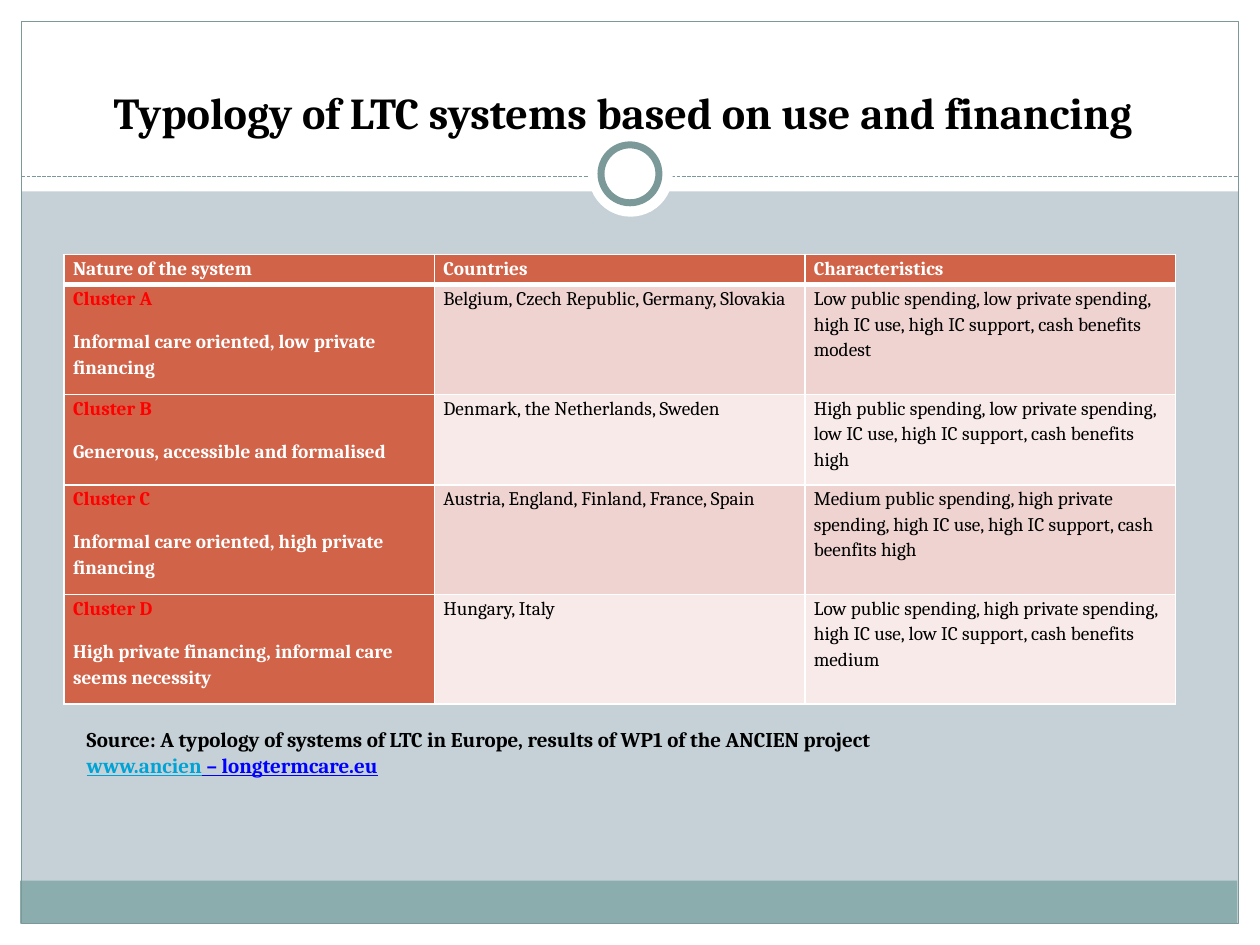
from lxml.etree import SubElement
from pptx import Presentation
from pptx.dml.color import RGBColor
from pptx.enum.dml import MSO_LINE
from pptx.enum.shapes import MSO_CONNECTOR, MSO_SHAPE
from pptx.enum.text import MSO_ANCHOR, MSO_AUTO_SIZE, PP_ALIGN
from pptx.oxml.ns import qn
from pptx.util import Inches, Pt

COLORS = {
    "background": "C5D1D7", "white": "FFFFFF", "black": "000000",
    "footer": "8CADAE", "frame": "7C999A", "accent": "D16349",
    "odd": "EED3D0", "even": "F7EAE9", "cluster": "FF0000",
    "site": "00A3D6", "address": "0000FF",
}
FONT = "Cambria"
TITLE = "Typology of LTC systems based on use and financing"
HEADINGS = ["Nature of the system", "Countries", "Characteristics"]
CLUSTERS = [
    ("Cluster A\nInformal care oriented, low private financing",
     "Belgium, Czech Republic, Germany, Slovakia",
     "Low public spending, low private spending, high IC use, "
     "high IC support, cash benefits modest"),
    ("Cluster B\nGenerous, accessible and formalised",
     "Denmark, the Netherlands, Sweden",
     "High public spending, low private spending, low IC use, "
     "high IC support, cash benefits high"),
    ("Cluster C\nInformal care oriented, high private financing",
     "Austria, England, Finland, France, Spain",
     "Medium public spending, high private spending, high IC use, "
     "high IC support, cash beenfits high"),
    ("Cluster D\nHigh private financing, informal care seems necessity",
     "Hungary, Italy",
     "Low public spending, high private spending, high IC use, "
     "low IC support, cash benefits medium"),
]
ROW_HEIGHTS = [0.24, 0.87, 0.72, 0.87, 0.87]
SOURCE = "Source: A typology of systems of LTC in Europe, results of WP1 of the ANCIEN project"


def rgb(name):
    """Return the palette colour called name."""
    return RGBColor.from_string(COLORS[name])


def format_run(run, size, color, bold=False, underline=None):
    """Apply the slide font and the given look to a run."""
    font = run.font
    font.name, font.size, font.bold = FONT, Pt(size), bold
    font.underline = underline
    font.color.rgb = rgb(color)


def add_panel(slide, kind, box, fill=None, line=None, weight=0.75):
    """Add a flat preset shape with an optional fill and outline."""
    panel = slide.shapes.add_shape(kind, *map(Inches, box))
    panel.shadow.inherit = False
    if fill:
        panel.fill.solid()
        panel.fill.fore_color.rgb = rgb(fill)
    else:
        panel.fill.background()
    if line:
        panel.line.color.rgb = rgb(line)
        panel.line.width = Pt(weight)
    else:
        panel.line.fill.background()


def add_divider(slide):
    """Add the dashed line below the title."""
    divider = slide.shapes.add_connector(
        MSO_CONNECTOR.STRAIGHT, Inches(0.17), Inches(1.4), Inches(9.83), Inches(1.4))
    divider.line.color.rgb = rgb("frame")
    divider.line.width = Pt(0.75)
    divider.line.dash_style = MSO_LINE.SQUARE_DOT
    SubElement(divider.element.spPr, qn("a:effectLst"))


def add_backdrop(slide):
    """Draw the margins, footer band, frame and ring."""
    slide.background.fill.solid()
    slide.background.fill.fore_color.rgb = rgb("background")
    margins = [(0, 7.33, 10, 0.17), (0, 0, 10, 1.52),
               (0, 0, 0.17, 7.5), (9.83, 0, 0.17, 7.5)]
    for margin in margins:
        add_panel(slide, MSO_SHAPE.RECTANGLE, margin, "white")
    add_panel(slide, MSO_SHAPE.RECTANGLE, (0.16, 6.99, 9.66, 0.34), "footer")
    add_panel(slide, MSO_SHAPE.RECTANGLE, (0.17, 0.17, 9.66, 7.16), line="frame")
    add_divider(slide)
    add_panel(slide, MSO_SHAPE.OVAL, (4.67, 1.05, 0.67, 0.67), "white")
    add_panel(slide, MSO_SHAPE.OVAL, (4.77, 1.15, 0.46, 0.46), "white", "frame", 4)


def add_title(slide):
    """Fill the title placeholder and bring it in front of the backdrop."""
    title = slide.shapes.title
    title.left, title.top = Inches(0.28), Inches(0.44)
    title.width, title.height = Inches(9.33), Inches(0.71)
    frame = title.text_frame
    frame.text = TITLE
    frame.word_wrap = True
    frame.auto_size = MSO_AUTO_SIZE.NONE
    frame.vertical_anchor = MSO_ANCHOR.BOTTOM
    frame.paragraphs[0].alignment = PP_ALIGN.CENTER
    format_run(frame.paragraphs[0].runs[0], 25.2, "black", bold=True)
    title.element.getparent().append(title.element)


def set_borders(cell, top, bottom):
    """Draw white borders round a cell, 1 pt at the sides."""
    properties = cell._tc.get_or_add_tcPr()
    for side, weight in (("L", 1), ("R", 1), ("T", top), ("B", bottom)):
        border = SubElement(properties, qn(f"a:ln{side}"), w=str(Pt(weight)))
        fill = SubElement(border, qn("a:solidFill"))
        SubElement(fill, qn("a:srgbClr"), val=COLORS["white"])


def fill_cell(cell, text, row, column):
    """Write and format one cell according to its place in the table."""
    set_borders(cell, 3 if row == 1 else 1, 3 if row == 0 else 1)
    accented = row == 0 or column == 0
    cell.fill.solid()
    cell.fill.fore_color.rgb = rgb("accent" if accented else "odd" if row % 2 else "even")
    cell.margin_left = cell.margin_right = Inches(0.07)
    cell.margin_top = cell.margin_bottom = 0
    cell.text_frame.text = text
    for index, paragraph in enumerate(cell.text_frame.paragraphs):
        paragraph.line_spacing = 1.15
        paragraph.space_after = Pt(10)
        color = "white" if accented else "black"
        if row and column == 0 and index == 0:
            color = "cluster"
        format_run(paragraph.runs[0], 11, color, bold=accented)


def add_typology(slide):
    """Add the table of clusters."""
    rows = [HEADINGS, *CLUSTERS]
    typology = slide.shapes.add_table(
        len(rows), len(HEADINGS), Inches(0.51), Inches(2.02),
        Inches(8.82), Inches(sum(ROW_HEIGHTS))).table
    for row, (texts, height) in enumerate(zip(rows, ROW_HEIGHTS)):
        typology.rows[row].height = Inches(height)
        for column, text in enumerate(texts):
            fill_cell(typology.cell(row, column), text, row, column)


def add_source(slide):
    """Add the source note and its web address."""
    note = slide.shapes.add_textbox(Inches(0.59), Inches(5.72), Inches(9.53), Inches(0.5))
    frame = note.text_frame
    frame.word_wrap = True
    frame.auto_size = MSO_AUTO_SIZE.SHAPE_TO_FIT_TEXT
    frame.text = SOURCE
    format_run(frame.paragraphs[0].runs[0], 12, "black", bold=True)
    address = frame.add_paragraph()
    for text, color in (("www.ancien", "site"), (" – longtermcare.eu", "address")):
        run = address.add_run()
        run.text = text
        format_run(run, 12, color, bold=True, underline=True)


def main():
    """Build and save the slide."""
    deck = Presentation()
    deck.slide_width, deck.slide_height = Inches(10), Inches(7.5)
    slide = deck.slides.add_slide(deck.slide_layouts[5])
    add_backdrop(slide)
    add_title(slide)
    add_typology(slide)
    add_source(slide)
    deck.save("out.pptx")


if __name__ == "__main__":
    main()
